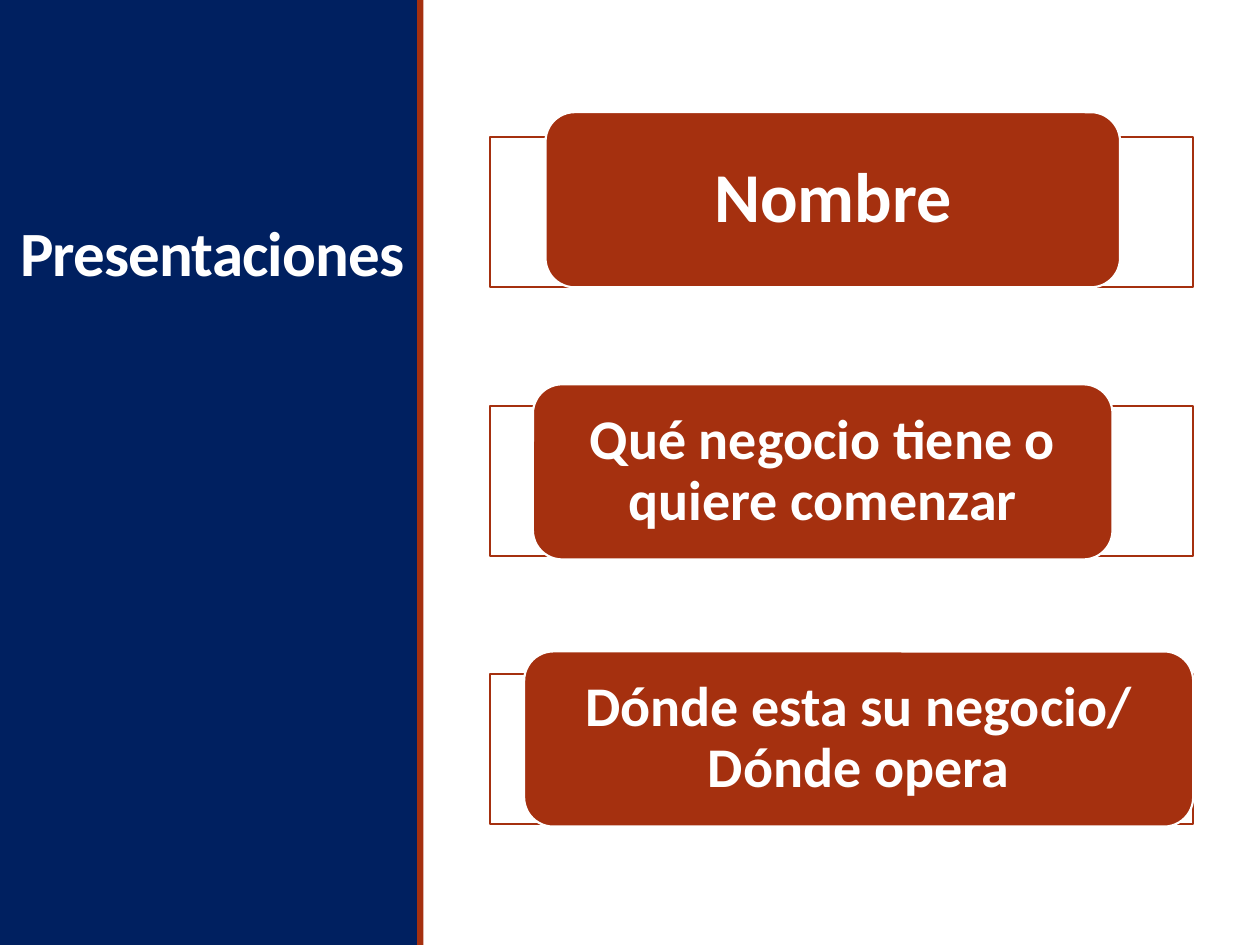
from pptx import Presentation, util as u
from pptx.dml.color import RGBColor
from pptx.enum import shapes, text
from pptx.oxml import ns
from lxml import etree

Inches = u.Inches
HUES = {"navy": "002060", "rust": "A5300F", "white": "FFFFFF"}
RECT = shapes.MSO_SHAPE.RECTANGLE
ROUND = shapes.MSO_SHAPE.ROUNDED_RECTANGLE

deck = Presentation()
deck.slide_width, deck.slide_height = Inches(10), Inches(7.5)
slide = deck.slides.add_slide(deck.slide_layouts[6])


def add_box(kind, left, top, width, height, fill, line=None):
    box = slide.shapes.add_shape(
        kind, Inches(left), Inches(top), Inches(width), Inches(height))
    box.shadow.inherit = False
    box.fill.solid()
    box.fill.fore_color.rgb = RGBColor.from_string(HUES[fill])
    if line:
        box.line.color.rgb = RGBColor.from_string(HUES[line])
        box.line.width = u.Pt(1.25)
    else:
        box.line.fill.background()
    return box


def set_text(box, words, size, inset, gap):
    frame = box.text_frame
    frame.text = words
    frame.word_wrap = True
    frame.vertical_anchor = text.MSO_ANCHOR.MIDDLE
    frame.margin_left = frame.margin_right = Inches(inset)
    frame.margin_top = frame.margin_bottom = 0
    para = frame.paragraphs[0]
    para.alignment = text.PP_ALIGN.CENTER
    para.line_spacing = gap
    run = para.runs[0]
    run.font.name, run.font.size, run.font.bold = "Calibri", u.Pt(size), True
    run.font.color.rgb = RGBColor.from_string(HUES["white"])
    return run


# Side panel with title and edge stripe
add_box(RECT, 0, 0, 3.32, 7.5, "navy")
title = slide.shapes.add_textbox(
    Inches(0.06), Inches(0.58), Inches(3.25), Inches(2.92))
run = set_text(title, "Presentaciones", 36, 0.05, 0.85)
run.font._element.set("spc", "-50")
add_box(RECT, 3.31, 0, 0.05, 7.5, "rust")

# Three prompts, each a rounded label over an outlined frame
prompts = [
    ("Nombre", 40, 4.33, 0.89, 4.56),
    ("Qué negocio tiene o quiere comenzar", 32, 4.23, 3.05, 4.6),
    ("Dónde esta su negocio/ Dónde opera", 32, 4.16, 5.17, 5.31),
]
for row, (words, size, left, top, width) in enumerate(prompts):
    back = add_box(RECT, 3.89, 1.09 + 2.13 * row, 5.58, 1.19, "white", "rust")
    tint = back.fill._xPr.find(".//" + ns.qn("a:srgbClr"))
    etree.SubElement(tint, ns.qn("a:alpha"), val="90000")
    label = add_box(ROUND, left, top, width, 1.39, "rust", "white")
    set_text(label, words, size, 0.15, 0.9)

deck.save("out.pptx")
